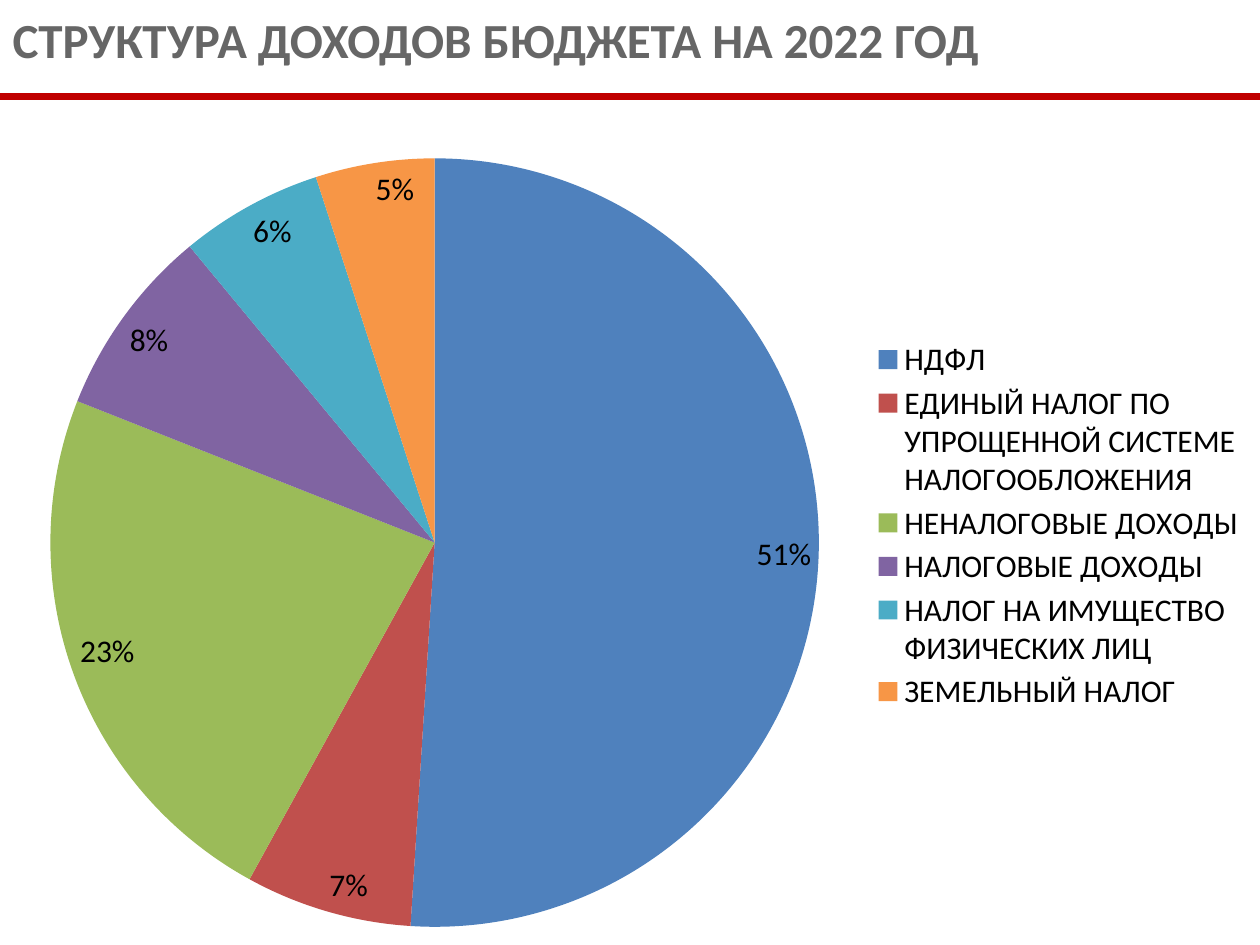
"""Build a slide with a pie chart of budget revenue structure for 2022."""
from lxml import etree
from pptx import Presentation
from pptx.chart.data import CategoryChartData
from pptx.dml.color import RGBColor
from pptx.enum import chart as ch, shapes, text
from pptx.oxml import ns
from pptx.util import Pt

GREY = RGBColor(0x66, 0x66, 0x66)
RED = RGBColor(0xC0, 0x00, 0x00)
BLACK = RGBColor(0x00, 0x00, 0x00)
FONT = "Calibri"
WIDTH, HEIGHT = 720, 540
RULE_Y, CHART_TOP = 55, 56
TITLE = "СТРУКТУРА ДОХОДОВ БЮДЖЕТА НА 2022 ГОД"
REVENUES = [
    ("НДФЛ", 51, RGBColor(0x4F, 0x81, 0xBD)),
    ("ЕДИНЫЙ НАЛОГ ПО УПРОЩЕННОЙ СИСТЕМЕ НАЛОГООБЛОЖЕНИЯ", 7, RGBColor(0xC0, 0x50, 0x4D)),
    ("НЕНАЛОГОВЫЕ ДОХОДЫ", 23, RGBColor(0x9B, 0xBB, 0x59)),
    ("НАЛОГОВЫЕ ДОХОДЫ", 8, RGBColor(0x80, 0x64, 0xA2)),
    ("НАЛОГ НА ИМУЩЕСТВО ФИЗИЧЕСКИХ ЛИЦ", 6, RGBColor(0x4B, 0xAC, 0xC6)),
    ("ЗЕМЕЛЬНЫЙ НАЛОГ", 5, RGBColor(0xF7, 0x96, 0x46)),
]
PIE_BOX = {"x": 0.04, "y": 0.07, "w": 0.61, "h": 0.91}
LEGEND_BOX = {"x": 0.69, "y": 0.28, "w": 0.3, "h": 0.45}


def set_attrs(obj, **values):
    for name, value in values.items():
        setattr(obj, name, value)


def style_font(font, size, color, bold=False):
    set_attrs(font, name=FONT, size=Pt(size), bold=bold)
    font.color.rgb = color


def place(element, box, after=None):
    for old in element.findall(ns.qn("c:layout")):
        element.remove(old)
    layout = etree.Element(ns.qn("c:layout"))
    manual = etree.SubElement(layout, ns.qn("c:manualLayout"))
    settings = {"xMode": "edge", "yMode": "edge", **box}
    if after is None:
        settings = {"layoutTarget": "inner", **settings}
        element.insert(0, layout)
    else:
        element.find(ns.qn(after)).addnext(layout)
    for tag, value in settings.items():
        etree.SubElement(manual, ns.qn(f"c:{tag}")).set("val", str(value))


def add_title(s):
    sp = s.shapes.title
    set_attrs(sp, left=Pt(0), top=Pt(0), width=Pt(708), height=Pt(45))
    tf = sp.text_frame
    set_attrs(tf, word_wrap=True, vertical_anchor=text.MSO_ANCHOR.MIDDLE,
              auto_size=text.MSO_AUTO_SIZE.NONE)
    p = tf.paragraphs[0]
    p.alignment = text.PP_ALIGN.LEFT
    r = p.add_run()
    r.text = TITLE
    style_font(r.font, 28, GREY, True)


def add_pie(s):
    data = CategoryChartData()
    data.categories = [name for name, _, _ in REVENUES]
    data.add_series("Доходы", [share for _, share, _ in REVENUES])
    chart = s.shapes.add_chart(ch.XL_CHART_TYPE.PIE, Pt(0), Pt(CHART_TOP), Pt(WIDTH),
                               Pt(HEIGHT - CHART_TOP), data).chart
    set_attrs(chart, has_title=False, has_legend=True)
    style_font(chart.font, 18, BLACK)
    set_attrs(chart.legend, position=ch.XL_LEGEND_POSITION.RIGHT, include_in_layout=False)
    style_font(chart.legend.font, 18, BLACK)
    plot = chart.plots[0]
    set_attrs(plot, vary_by_categories=True, has_data_labels=True)
    set_attrs(plot.data_labels, show_percentage=True, show_value=False, number_format="0%",
              number_format_is_linked=False, position=ch.XL_LABEL_POSITION.INSIDE_END)
    style_font(plot.data_labels.font, 18, BLACK)
    for i, (_, _, color) in enumerate(REVENUES):
        fill = plot.series[0].points[i].format.fill
        fill.solid()
        fill.fore_color.rgb = color
    area = chart.element.find(".//" + ns.qn("c:plotArea"))
    place(area, PIE_BOX)
    place(chart.element.find(".//" + ns.qn("c:legend")), LEGEND_BOX, "c:legendPos")


def add_rule(s):
    rule = s.shapes.add_connector(shapes.MSO_CONNECTOR.STRAIGHT, Pt(0), Pt(RULE_Y),
                                  Pt(WIDTH), Pt(RULE_Y))
    rule.line.color.rgb = RED
    rule.line.width = Pt(4)
    etree.SubElement(rule.element.spPr, ns.qn("a:effectLst"))


def main():
    prs = Presentation()
    set_attrs(prs, slide_width=Pt(WIDTH), slide_height=Pt(HEIGHT))
    s = prs.slides.add_slide(prs.slide_layouts[5])
    add_title(s)
    add_pie(s)
    add_rule(s)
    prs.save("out.pptx")


if __name__ == "__main__":
    main()
